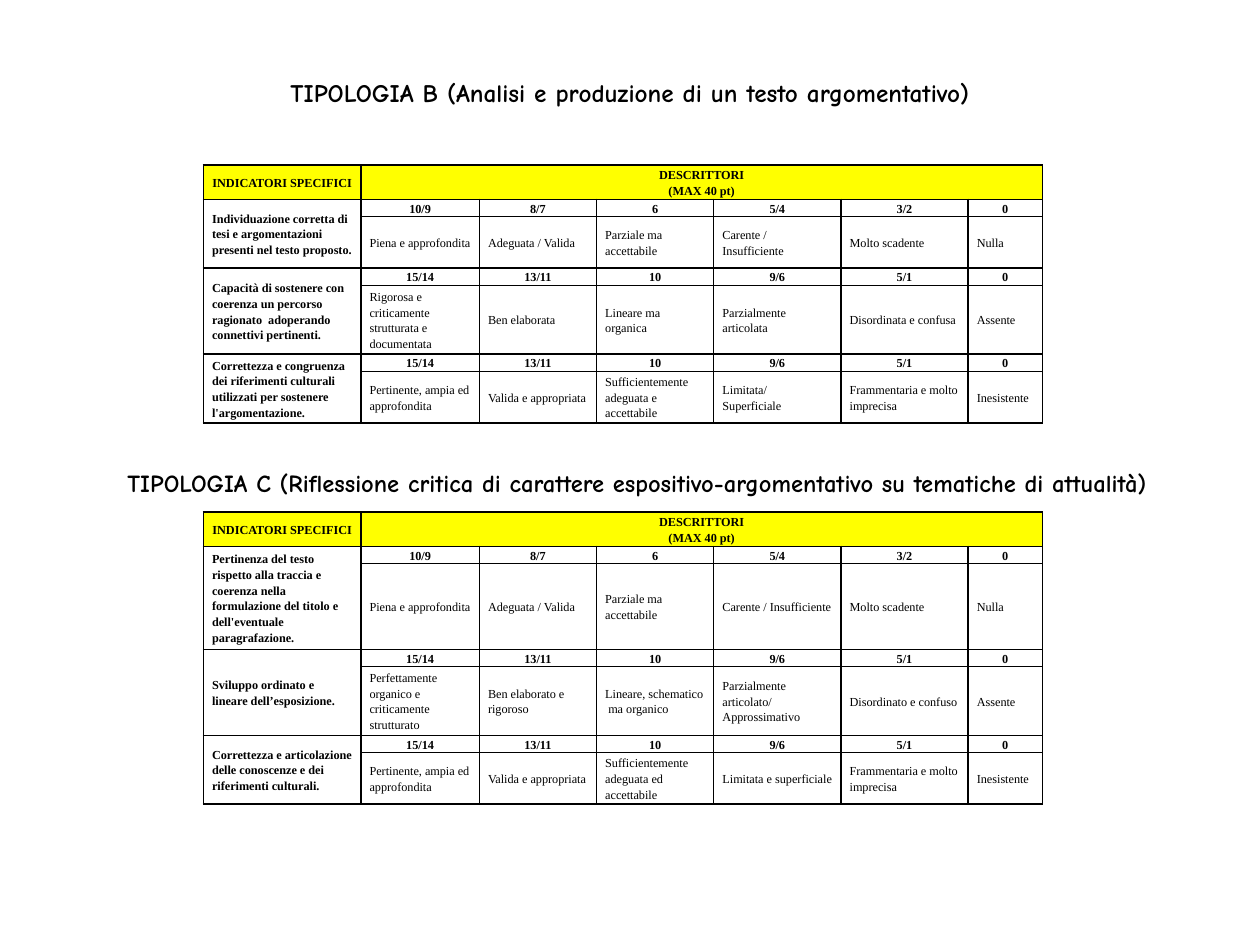
from lxml.etree import SubElement
from pptx import Presentation
from pptx.dml.color import RGBColor
from pptx.enum.text import MSO_ANCHOR, PP_ALIGN
from pptx.oxml.ns import qn
from pptx.util import Pt

BLACK = "000000"
YELLOW = "FFFF00"
COLUMN_WIDTHS = [90, 67.7, 67, 67, 72.7, 72.7, 42.5]
HEADER_HEIGHT = 19.6
SCORE_HEIGHT = 9.9
SCORES_TEN = ["10/9", "8/7", "6", "5/4", "3/2", "0"]
SCORES_FIFTEEN = ["15/14", "13/11", "10", "9/6", "5/1", "0"]

ARGUMENT_CRITERIA = [
    ("Individuazione corretta di tesi e argomentazioni presenti nel testo proposto.",
     SCORES_TEN, 29.4,
     ["Piena e approfondita", "Adeguata / Valida", "Parziale ma accettabile",
      "Carente /\nInsufficiente", "Molto scadente", "Nulla"]),
    ("Capacità di sostenere con coerenza un percorso ragionato  adoperando connettivi pertinenti.",
     SCORES_FIFTEEN, 39.3,
     ["Rigorosa e criticamente strutturata e documentata", "Ben elaborata",
      "Lineare ma organica", "Parzialmente articolata", "Disordinata e confusa", "Assente"]),
    ("Correttezza e congruenza dei riferimenti culturali utilizzati per sostenere l'argomentazione.",
     SCORES_FIFTEEN, 29.4,
     ["Pertinente, ampia ed approfondita", "Valida e appropriata",
      "Sufficientemente adeguata e accettabile", "Limitata/\nSuperficiale",
      "Frammentaria e molto imprecisa", "Inesistente"]),
]
REFLECTION_CRITERIA = [
    ("Pertinenza del testo rispetto alla traccia e coerenza nella formulazione del titolo "
     "e dell'eventuale paragrafazione.",
     SCORES_TEN, 49,
     ["Piena e approfondita", "Adeguata / Valida", "Parziale ma accettabile",
      "Carente / Insufficiente", "Molto scadente", "Nulla"]),
    ("Sviluppo ordinato e lineare dell’esposizione.",
     SCORES_FIFTEEN, 39.3,
     ["Perfettamente organico e criticamente strutturato", "Ben elaborato e rigoroso",
      "Lineare, schematico  ma organico", "Parzialmente articolato/\nApprossimativo",
      "Disordinato e confuso", "Assente"]),
    ("Correttezza e articolazione delle conoscenze e dei riferimenti culturali.",
     SCORES_FIFTEEN, 29.4,
     ["Pertinente, ampia ed approfondita", "Valida e appropriata",
      "Sufficientemente adeguata ed accettabile", "Limitata e superficiale",
      "Frammentaria e molto imprecisa", "Inesistente"]),
]


def color(value):
    return RGBColor.from_string(value)


def write_text(frame, text, font="Times New Roman", size=7, bold=False,
               align=PP_ALIGN.LEFT, line_spacing=1.15):
    frame.word_wrap = True
    for index, line in enumerate(text.split("\n")):
        paragraph = frame.paragraphs[0] if index == 0 else frame.add_paragraph()
        paragraph.alignment = align
        paragraph.line_spacing = line_spacing
        run = paragraph.add_run()
        run.text = line
        run.font.name = font
        run.font.size = Pt(size)
        run.font.bold = bold
        run.font.color.rgb = color(BLACK)


def add_title(slide, left, top, width, height, text, size, top_inset):
    shape = slide.shapes.add_textbox(Pt(left), Pt(top), Pt(width), Pt(height))
    frame = shape.text_frame
    frame.vertical_anchor = MSO_ANCHOR.MIDDLE
    frame.margin_top = Pt(top_inset)
    frame.margin_bottom = 0
    write_text(frame, text, font="Comic Neue", size=size, bold=True,
               align=PP_ALIGN.CENTER, line_spacing=1)


def add_borders(cell):
    properties = cell._tc.get_or_add_tcPr()
    for side in ("a:lnL", "a:lnR", "a:lnT", "a:lnB"):
        line = SubElement(properties, qn(side), w=str(Pt(1)))
        fill = SubElement(line, qn("a:solidFill"))
        SubElement(fill, qn("a:srgbClr"), val=BLACK)


def format_cell(cell, fill=None):
    add_borders(cell)
    cell.margin_left = cell.margin_right = Pt(5)
    cell.margin_top = cell.margin_bottom = 0
    cell.vertical_anchor = MSO_ANCHOR.MIDDLE
    if fill:
        cell.fill.solid()
        cell.fill.fore_color.rgb = color(fill)
    else:
        cell.fill.background()


def add_rubric(slide, left, top, criteria):
    row_heights = [HEADER_HEIGHT]
    for _, _, height, _ in criteria:
        row_heights += [SCORE_HEIGHT, height]
    table = slide.shapes.add_table(
        len(row_heights), len(COLUMN_WIDTHS), Pt(left), Pt(top),
        Pt(sum(COLUMN_WIDTHS)), Pt(sum(row_heights))).table
    table.first_row = table.horz_banding = False
    for column, width in zip(table.columns, COLUMN_WIDTHS):
        column.width = Pt(width)
    for index, height in enumerate(row_heights):
        table.rows[index].height = Pt(height)
        for cell in table.rows[index].cells:
            format_cell(cell, YELLOW if index == 0 else None)

    table.cell(0, 1).merge(table.cell(0, 6))
    for column, heading in enumerate(["INDICATORI SPECIFICI", "DESCRITTORI\n(MAX 40 pt)"]):
        write_text(table.cell(0, column).text_frame, heading, bold=True, align=PP_ALIGN.CENTER)

    for index, (indicator, scores, _, descriptors) in enumerate(criteria):
        row = 1 + 2 * index
        table.cell(row, 0).merge(table.cell(row + 1, 0))
        write_text(table.cell(row, 0).text_frame, indicator, bold=True)
        for column, (score, descriptor) in enumerate(zip(scores, descriptors), 1):
            write_text(table.cell(row, column).text_frame, score, bold=True,
                       align=PP_ALIGN.CENTER)
            write_text(table.cell(row + 1, column).text_frame, descriptor)


def main():
    presentation = Presentation()
    presentation.slide_width = Pt(720)
    presentation.slide_height = Pt(540)
    slide = presentation.slides.add_slide(presentation.slide_layouts[6])
    add_title(slide, 36, 21.6, 648, 44,
              "TIPOLOGIA B (Analisi e produzione di un testo argomentativo)", 14.4, 19)
    add_rubric(slide, 116.2, 94.3, ARGUMENT_CRITERIA)
    add_title(slide, 8.6, 252.7, 711.4, 39.6,
              "TIPOLOGIA C (Riflessione critica di carattere espositivo-argomentativo "
              "su tematiche di attualità)", 14, 7)
    add_rubric(slide, 116.2, 292.6, REFLECTION_CRITERIA)
    presentation.save("out.pptx")


if __name__ == "__main__":
    main()
